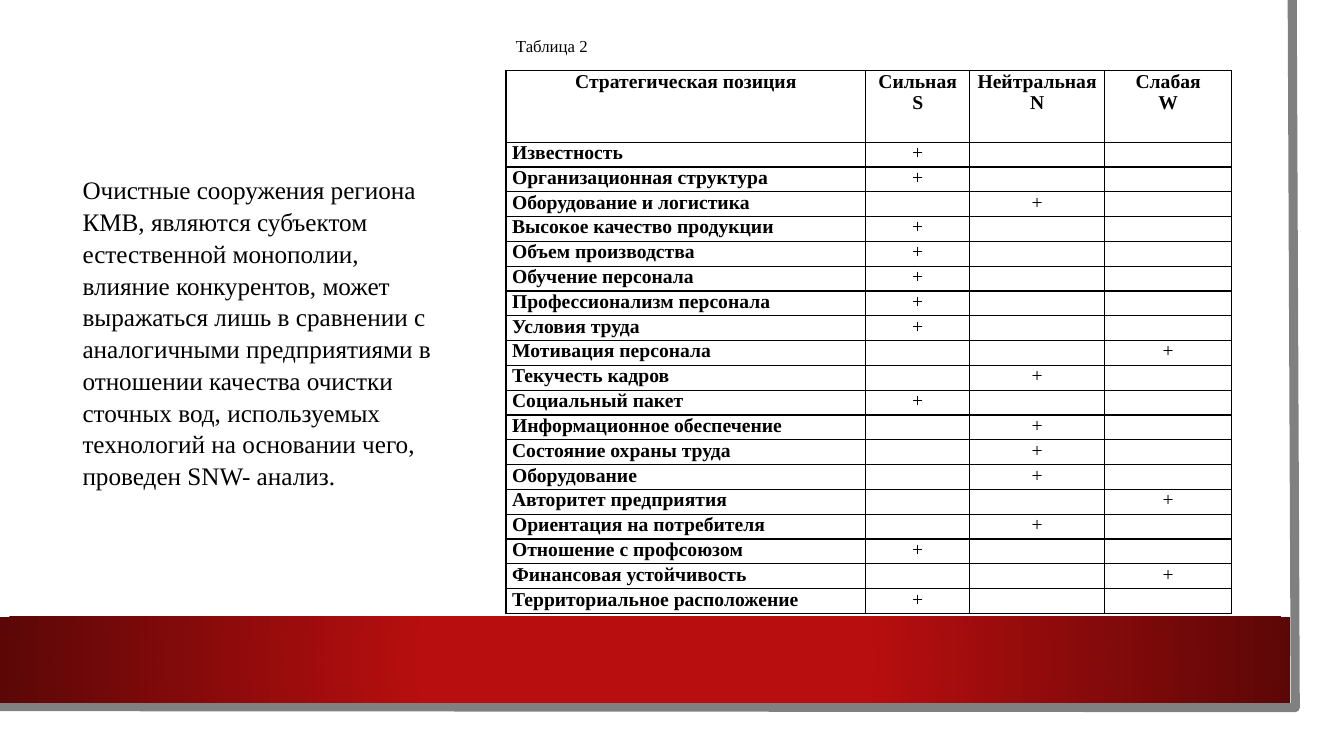
from dataclasses import dataclass

from lxml import etree
from pptx import Presentation
from pptx.dml.color import RGBColor as RGB
from pptx.enum.shapes import MSO_SHAPE as SHAPE
from pptx.enum.text import MSO_AUTO_SIZE as AUTO, PP_ALIGN as ALIGN
from pptx.oxml import parse_xml
from pptx.oxml.ns import nsdecls, qn
from pptx.util import Pt

FONT = "Times New Roman"
COLORS = {"page": "FFFFFF", "ink": "000000", "edge": "808080",
          "red": "B80E0F", "dark_red": "5C0707"}


@dataclass
class Note:
    text: str
    box: tuple[float, float, float, float]
    size: float
    wrap: bool
    spacing: float


@dataclass
class Factor:
    name: str
    rating: str  # S, N or W


NOTES = [
    Note("Очистные сооружения региона КМВ, являются субъектом естественной "
         "монополии, влияние конкурентов, может выражаться лишь в сравнении с "
         "аналогичными предприятиями в отношении качества очистки сточных вод, "
         "используемых технологий на основании чего, проведен SNW- анализ.",
         (51.84, 120.24, 272.16, 246.96), 18, True, 1.05),
    Note("Таблица 2", (361.44, 22.32, 66.24, 21.6), 12, False, 1),
]
HEADERS = ["Стратегическая позиция", "Сильная\nS", "Нейтральная\nN", "Слабая\nW"]
FACTORS = [
    Factor("Известность", "S"),
    Factor("Организационная структура", "S"),
    Factor("Оборудование и логистика", "N"),
    Factor("Высокое качество продукции", "S"),
    Factor("Объем производства", "S"),
    Factor("Обучение персонала", "S"),
    Factor("Профессионализм персонала", "S"),
    Factor("Условия труда", "S"),
    Factor("Мотивация персонала", "W"),
    Factor("Текучесть кадров", "N"),
    Factor("Социальный пакет", "S"),
    Factor("Информационное обеспечение", "N"),
    Factor("Состояние охраны труда", "N"),
    Factor("Оборудование", "N"),
    Factor("Авторитет предприятия", "W"),
    Factor("Ориентация на потребителя", "N"),
    Factor("Отношение с профсоюзом", "S"),
    Factor("Финансовая устойчивость", "W"),
    Factor("Территориальное расположение", "S"),
]
COL_WIDTHS = [257.04, 74.16, 96.48, 90.72]
HEADER_HEIGHT, ROW_HEIGHT = 51.12, 17.74
CELL_SIZE = 14


def rgb(name: str) -> RGB:
    return RGB.from_string(COLORS[name])


def format_run(r, size: float, bold: bool = False) -> None:
    r.font.name = FONT
    r.font.size = Pt(size)
    r.font.bold = bold
    r.font.color.rgb = rgb("ink")


def add_rect(slide, left: float, top: float, width: float, height: float):
    sp = slide.shapes.add_shape(SHAPE.RECTANGLE, Pt(left), Pt(top), Pt(width), Pt(height))
    sp.shadow.inherit = False
    sp.line.fill.background()
    return sp


def add_backdrop(slide) -> None:
    # White sheet
    sheet = add_rect(slide, 0, 0, 943.2, 523.44)
    sheet.fill.solid()
    sheet.fill.fore_color.rgb = rgb("page")

    # Grey edge along the right and bottom
    builder = slide.shapes.build_freeform(Pt(923.04), 0)
    builder.add_line_segments([(Pt(925.2), Pt(505.44)), (Pt(-2.16), Pt(504.72))], close=False)
    edge = builder.convert_to_shape()
    edge.shadow.inherit = False
    edge.fill.background()
    edge.line.color.rgb = rgb("edge")
    edge.line.width = Pt(6.5)

    # Red band, darker towards its ends
    band = add_rect(slide, 0, 440.64, 921.6, 61.2)
    gradient = parse_xml(
        f'<a:gradFill {nsdecls("a")} rotWithShape="1"><a:gsLst>'
        f'<a:gs pos="34000"><a:srgbClr val="{COLORS["red"]}"/></a:gs>'
        f'<a:gs pos="100000"><a:srgbClr val="{COLORS["dark_red"]}"/></a:gs></a:gsLst>'
        '<a:path path="circle"><a:fillToRect l="50000" t="50000" r="50000" b="50000"/>'
        '</a:path></a:gradFill>')
    band.element.spPr.find(qn("a:prstGeom")).addnext(gradient)


def add_note(slide, note: Note) -> None:
    sp = slide.shapes.add_textbox(*map(Pt, note.box))
    tf = sp.text_frame
    tf.text = note.text
    tf.word_wrap = note.wrap
    tf.auto_size = AUTO.SHAPE_TO_FIT_TEXT
    p = tf.paragraphs[0]
    p.line_spacing = note.spacing
    format_run(p.runs[0], note.size)


def add_borders(cell) -> None:
    tc_pr = cell._tc.get_or_add_tcPr()
    for i, side in enumerate(("lnL", "lnR", "lnT", "lnB")):
        tc_pr.insert(i, parse_xml(
            f'<a:{side} {nsdecls("a")} w="12700"><a:solidFill>'
            f'<a:srgbClr val="{COLORS["ink"]}"/></a:solidFill></a:{side}>'))


def fill_cell(cell, text: str, bold: bool, align: ALIGN) -> None:
    cell.margin_left = cell.margin_right = Pt(4.32)
    cell.margin_top = cell.margin_bottom = 0
    cell.fill.solid()
    cell.fill.fore_color.rgb = rgb("page")
    add_borders(cell)
    cell.text_frame.text = text
    for p in cell.text_frame.paragraphs:
        p.alignment = align
        for r in p.runs:
            format_run(r, CELL_SIZE, bold)
        if not p.runs:  # keeps blank cells from stretching the row
            etree.SubElement(p._p, qn("a:endParaRPr"), sz=str(CELL_SIZE * 100))


def add_snw_table(slide) -> None:
    rows = [HEADERS] + [[f.name] + ["+" if f.rating == mark else "" for mark in "SNW"]
                        for f in FACTORS]
    heights = [HEADER_HEIGHT] + [ROW_HEIGHT] * len(FACTORS)
    table = slide.shapes.add_table(len(rows), len(HEADERS), Pt(361.44), Pt(50.4),
                                   Pt(sum(COL_WIDTHS)), Pt(sum(heights))).table
    table.first_row = table.horz_banding = False
    for column, width in zip(table.columns, COL_WIDTHS):
        column.width = Pt(width)
    for i, (texts, height) in enumerate(zip(rows, heights)):
        table.rows[i].height = Pt(height)
        for j, text in enumerate(texts):
            align = ALIGN.LEFT if i and not j else ALIGN.CENTER
            fill_cell(table.cell(i, j), text, i == 0 or j == 0, align)


def main() -> None:
    prs = Presentation()
    prs.slide_width, prs.slide_height = Pt(960), Pt(540)
    slide = prs.slides.add_slide(prs.slide_layouts[6])
    add_backdrop(slide)
    add_snw_table(slide)
    for note in NOTES:
        add_note(slide, note)
    prs.save("out.pptx")


if __name__ == "__main__":
    main()
